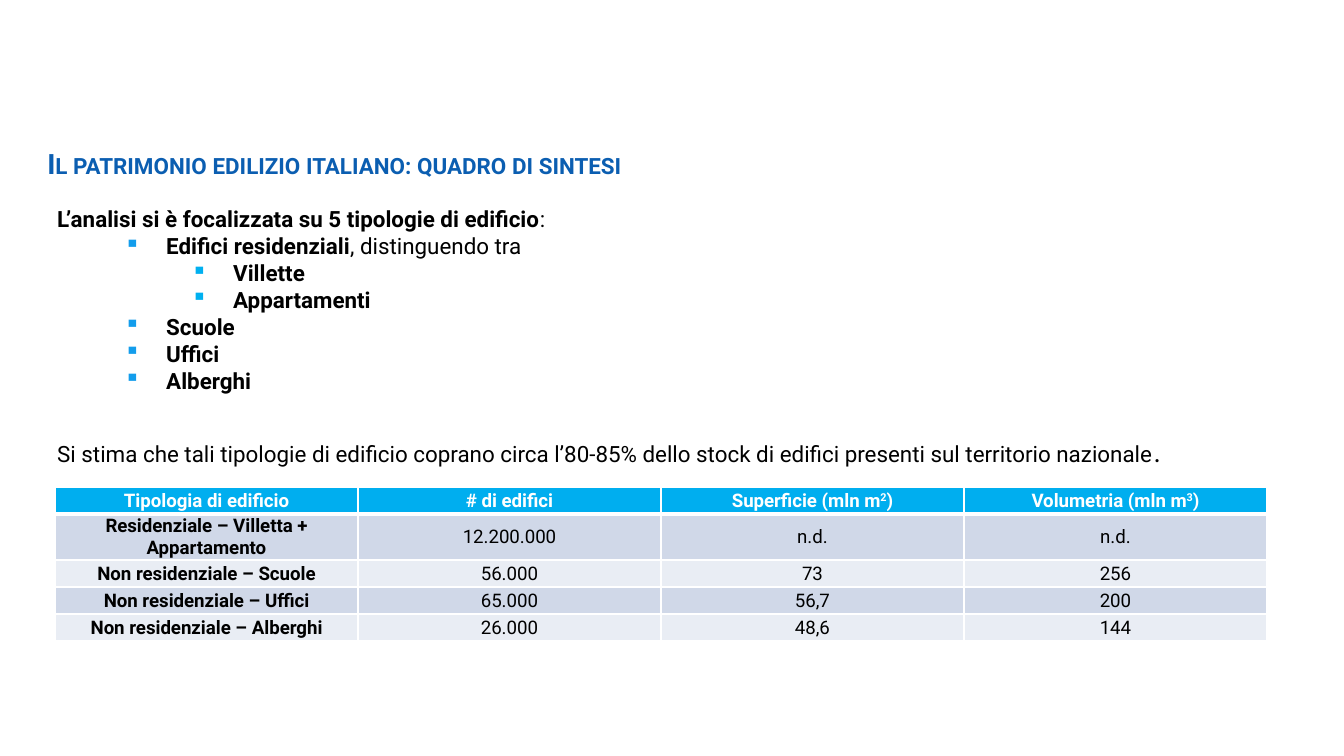
from dataclasses import dataclass

from lxml.etree import SubElement
from pptx import Presentation
from pptx.dml.color import RGBColor
from pptx.enum.text import MSO_ANCHOR, PP_ALIGN
from pptx.oxml.ns import qn
from pptx.util import Emu, Pt

SCALE = 914400 / 134.4


@dataclass(frozen=True)
class Theme:
    font: str = "Roboto"
    stop_font: str = "Calibri"
    title: str = "0B5EB1"
    text: str = "000000"
    bullets: tuple = ("139DEC", "00B0F0")
    header: str = "00AEEF"
    bands: tuple = ("D0D8E8", "E9EDF4")
    white: str = "FFFFFF"
    title_size: int = 15
    body_size: int = 12
    stop_size: int = 14
    table_size: int = 10
    border: int = 1
    header_border: int = 3


def px(n):
    return Emu(round(n * SCALE))


class SlideBuilder:
    def __init__(self, prs, theme):
        self.theme = theme
        self.s = prs.slides.add_slide(prs.slide_layouts[6])

    def text_box(self, left, top, width, height):
        sp = self.s.shapes.add_textbox(px(left), px(top), px(width), px(height))
        tf = sp.text_frame
        tf.word_wrap = True
        return tf

    def run(self, p, text, size, color=None, bold=False, font=None, **attrs):
        """Add a run; attrs go to its properties, such as cap or baseline."""
        r = p.add_run()
        r.text = text
        r.font.name = font or self.theme.font
        r.font.size = Pt(size)
        r.font.bold = bold
        r.font.color.rgb = RGBColor.from_string(color or self.theme.text)
        for name, value in attrs.items():
            r.font._element.set(name, value)

    def bullet(self, p, level):
        p.level = level
        pPr = p._p.get_or_add_pPr()
        pPr.set("marL", str(px(109 + 67 * (level - 1))))
        pPr.set("indent", str(px(-42)))
        color = SubElement(pPr, qn("a:buClr"))
        SubElement(color, qn("a:srgbClr"), val=self.theme.bullets[level - 1])
        SubElement(pPr, qn("a:buChar"), char="▪")

    def bullet_list(self, tf, items):
        """Write (level, bold text, plain text) items; level 0 has no bullet."""
        for i, (level, strong, plain) in enumerate(items):
            p = tf.add_paragraph() if i else tf.paragraphs[0]
            if level:
                self.bullet(p, level)
            self.run(p, strong, self.theme.body_size, bold=True)
            if plain:
                self.run(p, plain, self.theme.body_size)

    def borders(self, cell, bottom):
        tcPr = cell._tc.get_or_add_tcPr()
        for side in "LRTB":
            width = bottom if side == "B" else self.theme.border
            ln = SubElement(tcPr, qn(f"a:ln{side}"), w=str(Pt(width)))
            fill = SubElement(ln, qn("a:solidFill"))
            SubElement(fill, qn("a:srgbClr"), val=self.theme.white)

    def cell(self, cell, parts, fill, color, bold, bottom):
        """Fill a cell; parts is the text and, if any, its raised digit and ending."""
        cell.margin_left = cell.margin_right = cell.margin_top = px(1)
        cell.margin_bottom = 0
        cell.vertical_anchor = MSO_ANCHOR.MIDDLE
        self.borders(cell, bottom)
        cell.fill.solid()
        cell.fill.fore_color.rgb = RGBColor.from_string(fill)
        p = cell.text_frame.paragraphs[0]
        p.alignment = PP_ALIGN.CENTER
        for i, part in enumerate(parts):
            attrs = {"baseline": "30000"} if i == 1 else {}
            self.run(p, part, self.theme.table_size, color, bold, **attrs)

    def table(self, left, top, col_width, heights, header, rows):
        t = self.theme
        frame = self.s.shapes.add_table(
            len(heights), len(header), px(left), px(top),
            px(col_width * len(header)), px(sum(heights)))
        table = frame.table
        for col in table.columns:
            col.width = px(col_width)
        for row, height in zip(table.rows, heights):
            row.height = px(height)
        for c, parts in enumerate(header):
            self.cell(table.cell(0, c), parts, t.header, t.white, True, t.header_border)
        for r, values in enumerate(rows):
            for c, value in enumerate(values):
                self.cell(table.cell(r + 1, c), [value], t.bands[r % 2],
                          t.text, c == 0, t.border)


TYPES = [
    (0, "L’analisi si è focalizzata su 5 tipologie di edificio", ":"),
    (1, "Edifici residenziali", ", distinguendo tra"),
    (2, "Villette", ""),
    (2, "Appartamenti", ""),
    (1, "Scuole", ""),
    (1, "Uffici", ""),
    (1, "Alberghi", ""),
]
HEADER = [
    ["Tipologia di edificio"],
    ["# di edifici"],
    ["Superficie (mln m", "2", ")"],
    ["Volumetria (mln m", "3", ")"],
]
STOCK = [
    ["Residenziale – Villetta + Appartamento", "12.200.000", "n.d.", "n.d."],
    ["Non residenziale – Scuole", "56.000", "73", "256"],
    ["Non residenziale – Uffici", "65.000", "56,7", "200"],
    ["Non residenziale – Alberghi", "26.000", "48,6", "144"],
]


def main():
    theme = Theme()
    prs = Presentation()
    prs.slide_width, prs.slide_height = px(1344), px(756)
    slide = SlideBuilder(prs, theme)

    title = slide.text_box(34, 140, 1116, 47).paragraphs[0]
    slide.run(title, "Il patrimonio edilizio italiano: quadro di sintesi",
              theme.title_size, theme.title, True, cap="small")

    slide.bullet_list(slide.text_box(44, 199, 1222, 245), TYPES)

    estimate = slide.text_box(44, 430, 1222, 86).paragraphs[0]
    slide.run(estimate, "Si stima che tali tipologie di edificio coprano circa l’80-85% "
              "dello stock di edifici presenti sul territorio nazionale", theme.body_size)
    slide.run(estimate, ".", theme.stop_size, font=theme.stop_font)

    slide.table(55, 487, 303, [27, 44, 27, 27, 27], HEADER, STOCK)
    prs.save("out.pptx")


if __name__ == "__main__":
    main()
